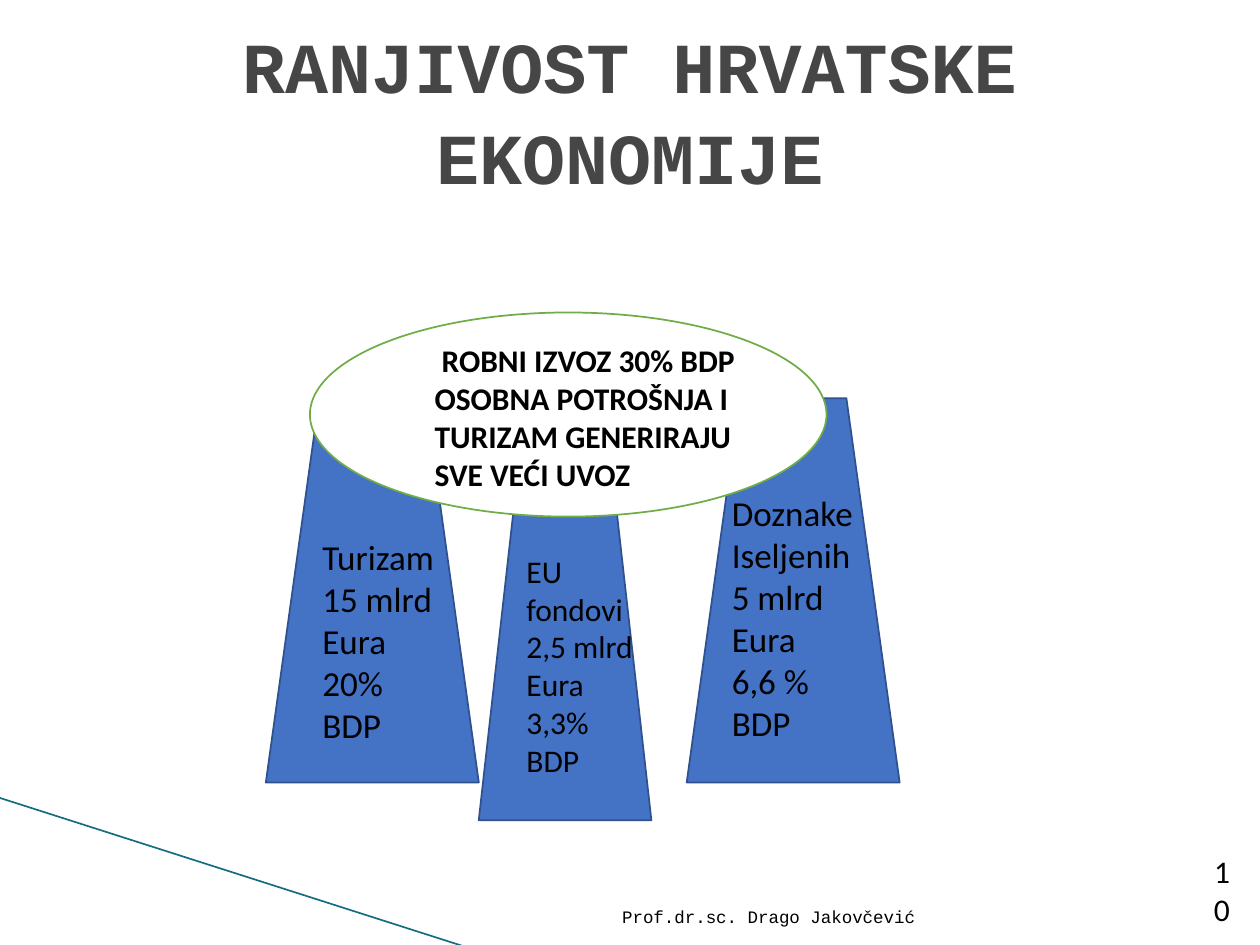
"""Build the slide on the vulnerability of the Croatian economy."""
from lxml import etree
from pptx import Presentation
from pptx.dml.color import RGBColor
from pptx.enum.shapes import MSO_CONNECTOR, MSO_SHAPE
from pptx.enum.text import MSO_ANCHOR, PP_ALIGN
from pptx.oxml.ns import qn
from pptx.util import Inches, Pt

STRAIGHT = MSO_CONNECTOR.STRAIGHT
TRAPEZOID, OVAL = MSO_SHAPE.TRAPEZOID, MSO_SHAPE.OVAL
TOP, MIDDLE, BOTTOM = MSO_ANCHOR.TOP, MSO_ANCHOR.MIDDLE, MSO_ANCHOR.BOTTOM
LEFT, CENTER, RIGHT = PP_ALIGN.LEFT, PP_ALIGN.CENTER, PP_ALIGN.RIGHT

COLORS = {
    "title": "464646", "text": "000000", "pillar": "4472C4",
    "pillar_line": "2F528F", "oval": "FFFFFF", "oval_line": "70AD47",
    "accent": "156D83",
}
PILLARS = [(3.8, 3.46, 1.37, 3.05), (2.11, 3.17, 1.69, 3.04), (5.45, 3.16, 1.69, 3.05)]
PILLAR_INSET = 0.25
OVAL_BOX = (2.46, 2.48, 4.1, 1.62)
ACCENT_LINE = (-0.01, 6.33, 3.71, 7.52)

TITLE = {"name": "Courier New", "size": 41, "bold": True, "color": "title",
         "alignment": CENTER, "anchor": MIDDLE, "line_spacing": 1.06}
LARGE = {"name": "Calibri", "size": 20}
MEDIUM = {"name": "Calibri", "size": 18}
STRONG = {**MEDIUM, "bold": True}
FOOTER = {"name": "Courier New", "size": 10, "alignment": RIGHT, "anchor": BOTTOM}
NUMBER = {**MEDIUM, "alignment": RIGHT, "anchor": BOTTOM}

TEXTS = [
    ((0.5, 0.16, 9, 1.39), ["RANJIVOST HRVATSKE EKONOMIJE"], TITLE),
    ((2.46, 4.2, 1.19, 1.78), ["Turizam", "15 mlrd Eura", "20% BDP"], LARGE),
    ((4.08, 4.33, 1.07, 1.92), ["EU fondovi", "2,5 mlrd Eura", "3,3%", "BDP"], MEDIUM),
    ((5.71, 3.85, 1.24, 2.42),
     ["Doznake", "Iseljenih", "5 mlrd", "Eura", "6,6 %", "BDP"], LARGE),
    ((3.35, 2.66, 2.61, 1.31),
     [" ROBNI IZVOZ 30% BDP", "OSOBNA POTROŠNJA I TURIZAM GENERIRAJU SVE VEĆI UVOZ"], STRONG),
    ((4.79, 7.01, 2.57, 0.4), ["Prof.dr.sc. Drago Jakovčević"], FOOTER),
    ((9.46, 7.01, 0.4, 0.4), ["10"], NUMBER),
]


def color(name):
    return RGBColor.from_string(COLORS[name])


def add_figure(slide, kind, box, fill):
    shape = slide.shapes.add_shape(kind, *map(Inches, box))
    shape.shadow.inherit = False
    shape.fill.solid()
    shape.fill.fore_color.rgb = color(fill)
    shape.line.color.rgb = color(f"{fill}_line")
    shape.line.width = Pt(1)
    return shape


def add_accent_line(slide):
    connector = slide.shapes.add_connector(STRAIGHT, *map(Inches, ACCENT_LINE))
    connector.line.color.rgb = color("accent")
    connector.line.width = Pt(0.95)
    etree.SubElement(connector._element.spPr, qn("a:effectLst"))


def add_text(slide, box, lines, style):
    frame = slide.shapes.add_textbox(*map(Inches, box)).text_frame
    frame.word_wrap = True
    frame.vertical_anchor = style.get("anchor", TOP)
    frame.text = "\n".join(lines)
    font_values = {"name": style["name"], "size": Pt(style["size"]),
                   "bold": style.get("bold", False)}
    for paragraph in frame.paragraphs:
        paragraph.alignment = style.get("alignment", LEFT)
        paragraph.line_spacing = style.get("line_spacing")
        for run in paragraph.runs:
            for attribute, value in font_values.items():
                setattr(run.font, attribute, value)
            run.font.color.rgb = color(style.get("color", "text"))


def main():
    presentation = Presentation()
    presentation.slide_width, presentation.slide_height = Inches(10), Inches(7.5)
    slide = presentation.slides.add_slide(presentation.slide_layouts[6])
    add_accent_line(slide)
    for box in PILLARS:
        add_figure(slide, TRAPEZOID, box, "pillar").adjustments[0] = PILLAR_INSET
    add_figure(slide, OVAL, OVAL_BOX, "oval")
    for box, lines, style in TEXTS:
        add_text(slide, box, lines, style)
    presentation.save("out.pptx")


if __name__ == "__main__":
    main()
